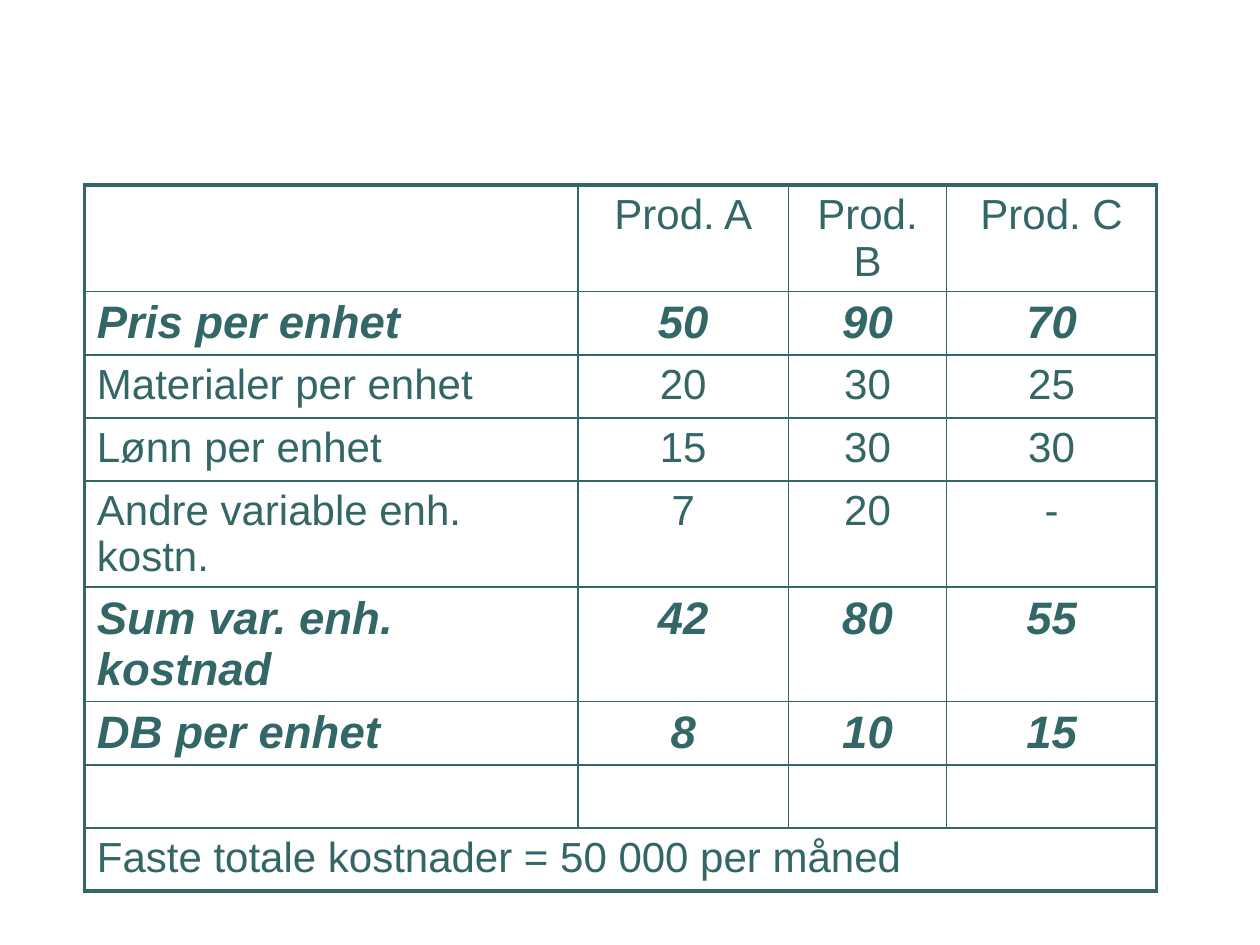
import pptx
import pptx.dml.color
import pptx.enum.text
import pptx.oxml
import pptx.oxml.ns
import pptx.util
from pptx.util import Cm

COLORS = {"teal": "336666"}
FONT = "Arial"
THIN, THICK = 1, 2.25
COLUMN_WIDTHS = [9.95, 4.25, 3.18, 4.24]
ROW_HEIGHT = 1.27
ROWS = [
    ["", "Prod. A", "Prod. B", "Prod. C"],
    ["Pris per enhet", "50", "90", "70"],
    ["Materialer per enhet", "20", "30", "25"],
    ["Lønn per enhet", "15", "30", "30"],
    ["Andre variable enh. kostn.", "7", "20", "-"],
    ["Sum var. enh. kostnad", "42", "80", "55"],
    ["DB per enhet", "8", "10", "15"],
    ["", "", "", ""],
    ["Faste totale kostnader = 50 000 per måned", "", "", ""],
]
EMPHASIZED_ROWS = {1, 5, 6}


def set_borders(cell, widths):
    """Draw the cell's sides; widths maps L, R, T and B to points."""
    properties = cell._tc.get_or_add_tcPr()
    for position, side in enumerate("LRTB"):
        line = pptx.oxml.parse_xml(
            f'<a:ln{side} {pptx.oxml.ns.nsdecls("a")} w="{pptx.util.Pt(widths[side])}">'
            f'<a:solidFill><a:srgbClr val="{COLORS["teal"]}"/></a:solidFill></a:ln{side}>'
        )
        properties.insert(position, line)


def write_cell(cell, text, centered, emphasized):
    cell.fill.background()
    if not text:
        return
    cell.text_frame.text = text
    para = cell.text_frame.paragraphs[0]
    align = pptx.enum.text.PP_ALIGN
    para.alignment = align.CENTER if centered else align.LEFT
    font = para.runs[0].font
    font.name = FONT
    font.size = pptx.util.Pt(26 if emphasized else 24)
    font.bold = font.italic = emphasized
    font.color.rgb = pptx.dml.color.RGBColor.from_string(COLORS["teal"])


def add_cost_table(page):
    last_row, last_column = len(ROWS) - 1, len(COLUMN_WIDTHS) - 1
    frame = page.shapes.add_table(
        len(ROWS), len(COLUMN_WIDTHS), Cm(1.7), Cm(3.73),
        Cm(sum(COLUMN_WIDTHS)), Cm(ROW_HEIGHT * len(ROWS)),
    )
    table = frame.table
    table.first_row = table.horz_banding = False
    for column, width in zip(table.columns, COLUMN_WIDTHS):
        column.width = Cm(width)
    for row in table.rows:
        row.height = Cm(ROW_HEIGHT)
    table.cell(last_row, 0).merge(table.cell(last_row, last_column))

    for i, texts in enumerate(ROWS):
        for j, text in enumerate(texts):
            cell = table.cell(i, j)
            write_cell(cell, text, j > 0, i in EMPHASIZED_ROWS)
            right_column = j + cell.span_width - 1 if cell.is_merge_origin else j
            outer = {"L": j == 0, "R": right_column == last_column,
                     "T": i == 0, "B": i == last_row}
            set_borders(cell, {side: THICK if edge else THIN for side, edge in outer.items()})


def main():
    deck = pptx.Presentation()
    deck.slide_width, deck.slide_height = Cm(25.4), Cm(19.05)
    page = deck.slides.add_slide(deck.slide_layouts[6])
    add_cost_table(page)
    deck.save("out.pptx")


if __name__ == "__main__":
    main()
